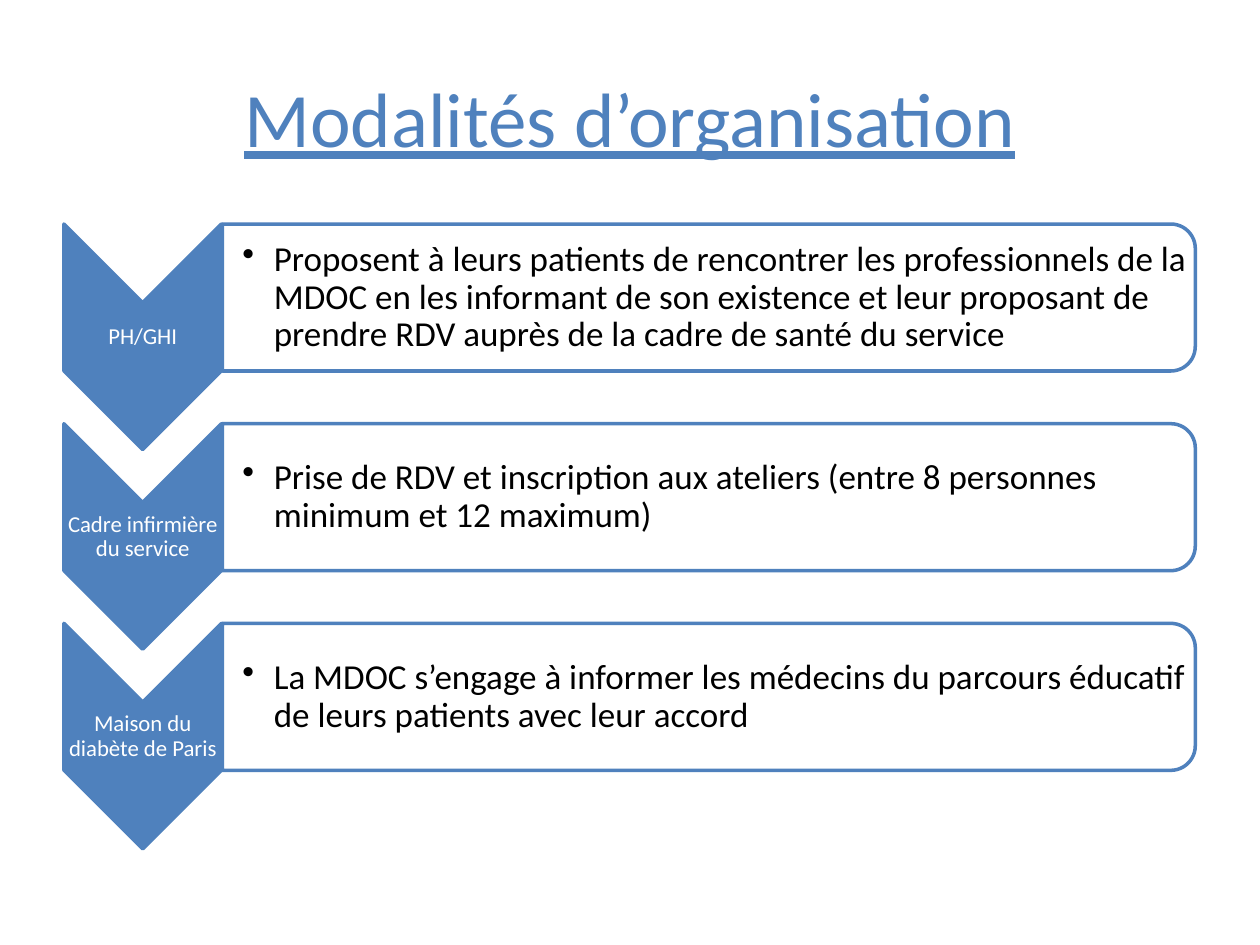
from pptx import Presentation
from pptx.dml.color import RGBColor
from pptx.enum.shapes import MSO_SHAPE
from pptx.enum.text import MSO_ANCHOR, PP_ALIGN
from pptx.oxml.ns import qn
from pptx.util import Pt
from lxml import etree

CHEVRON = MSO_SHAPE.CHEVRON
ROUND_TWO = MSO_SHAPE.ROUND_2_SAME_RECTANGLE
MIDDLE = MSO_ANCHOR.MIDDLE
CENTER = PP_ALIGN.CENTER
LEFT = PP_ALIGN.LEFT

BLUE = "4F81BD"
WHITE = "FFFFFF"
BLACK = "000000"

STEPS = [
    ("PH/GHI",
     "Proposent à leurs patients de rencontrer les professionnels de la MDOC "
     "en les informant de son existence et leur proposant de prendre RDV "
     "auprès de la cadre de santé du service"),
    ("Cadre infirmière du service",
     "Prise de RDV et inscription aux ateliers "
     "(entre 8 personnes minimum et 12 maximum)"),
    ("Maison du diabète de Paris",
     "La MDOC s’engage à informer les médecins du parcours éducatif "
     "de leurs patients avec leur accord"),
]
FIRST_TOP = 128
PITCH = 114.1


def rgb(color):
    return RGBColor.from_string(color)


class Deck:
    font = "Calibri"
    line_width = 2

    def __init__(self, slide):
        self.s = slide

    def add_run(self, p, text, size, color):
        r = p.add_run()
        r.text = text
        r.font.name = self.font
        r.font.size = Pt(size)
        r.font.color.rgb = rgb(color)
        return r

    def title(self, text, x, y, w, h):
        sp = self.s.shapes.title
        sp.left, sp.top, sp.width, sp.height = Pt(x), Pt(y), Pt(w), Pt(h)
        tf = sp.text_frame
        tf.vertical_anchor = MIDDLE
        p = tf.paragraphs[0]
        p.alignment = CENTER
        self.add_run(p, text, 44, BLUE).font.underline = True

    def turned_shape(self, kind, x, y, w, h, fill, alpha=100):
        left, top = x + (w - h) / 2, y + (h - w) / 2
        sp = self.s.shapes.add_shape(kind, Pt(left), Pt(top), Pt(h), Pt(w))
        sp.rotation = 90
        sp.shadow.inherit = False
        sp.fill.solid()
        sp.fill.fore_color.rgb = rgb(fill)
        sp.line.color.rgb = rgb(BLUE)
        sp.line.width = Pt(self.line_width)
        if alpha < 100:
            clr = sp.fill._xPr.find(qn("a:solidFill"))[0]
            etree.SubElement(clr, qn("a:alpha")).set("val", str(alpha * 1000))

    def text(self, text, x, y, w, h, size, color, align=CENTER, inset=0.7):
        sp = self.s.shapes.add_textbox(Pt(x), Pt(y), Pt(w), Pt(h))
        tf = sp.text_frame
        tf.word_wrap = True
        tf.vertical_anchor = MIDDLE
        tf.margin_left = Pt(inset)
        tf.margin_top = tf.margin_right = tf.margin_bottom = Pt(0.7)
        p = tf.paragraphs[0]
        p.alignment = align
        p.line_spacing = 0.9
        self.add_run(p, text, size, color)
        return p

    def bullet_text(self, text, x, y, w, h):
        p = self.text(text, x, y, w, h, 20, BLACK, LEFT, 11.2)
        pPr = p._p.get_or_add_pPr()
        pPr.set("marL", str(Pt(18)))
        pPr.set("indent", str(-Pt(18)))
        etree.SubElement(pPr, qn("a:buChar")).set("char", "•")

    def step(self, label, detail, y):
        self.turned_shape(CHEVRON, 36.5, y, 90, 128.9, BLUE)
        self.text(label, 36.5, y + 45.3, 90, 38.9, 13, WHITE)
        self.turned_shape(ROUND_TWO, 127, y, 556, 84, WHITE, 90)
        self.bullet_text(detail, 127.3, y + 4.3, 552.3, 75.6)


def main():
    prs = Presentation()
    prs.slide_width, prs.slide_height = Pt(720), Pt(540)
    deck = Deck(prs.slides.add_slide(prs.slide_layouts[5]))
    deck.title("Modalités d’organisation", 36, 21.6, 648, 90)
    for i, (label, detail) in enumerate(STEPS):
        deck.step(label, detail, FIRST_TOP + i * PITCH)
    prs.save("out.pptx")


if __name__ == "__main__":
    main()
